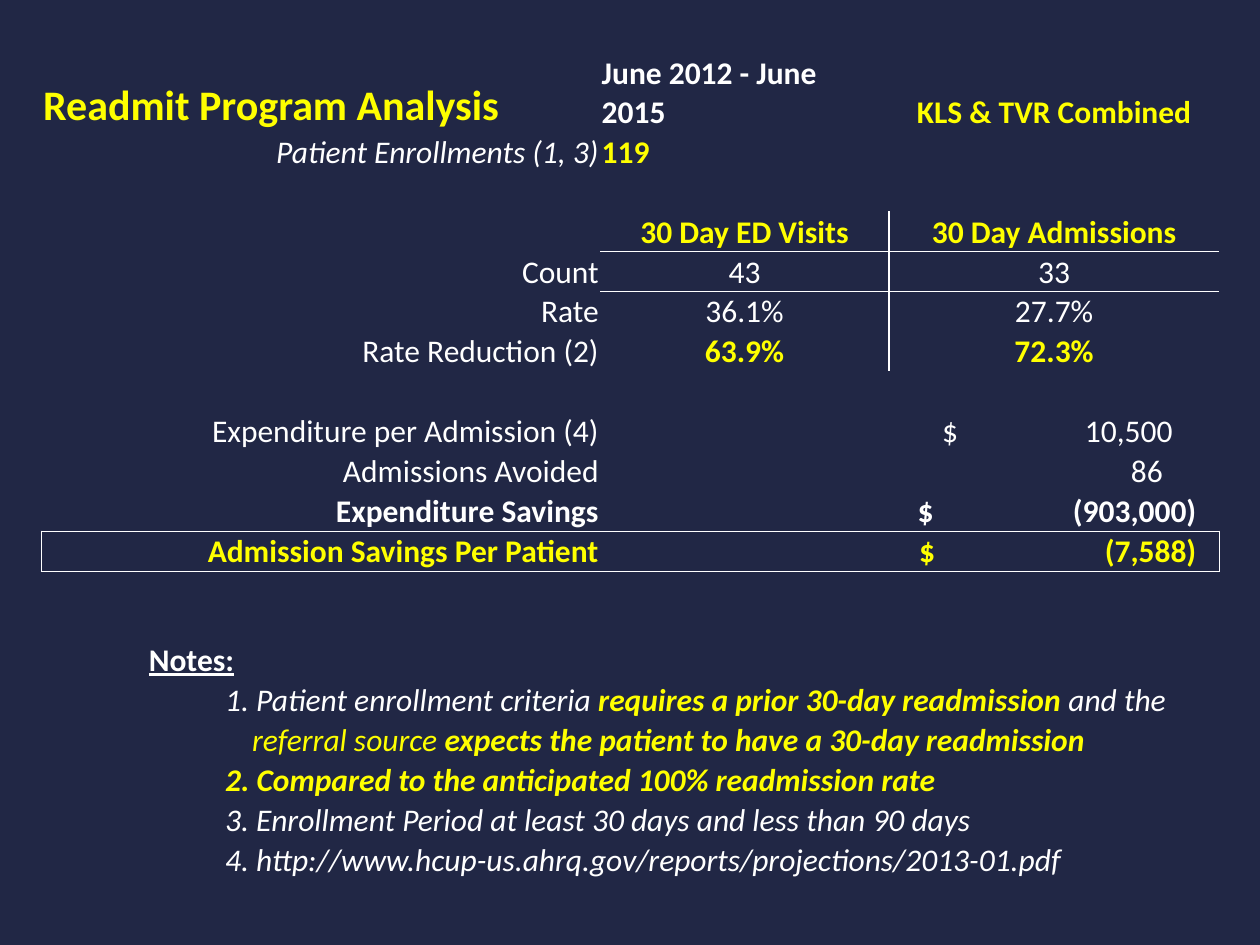
import pptx
import pptx.dml.color
import pptx.enum.text
import pptx.oxml
import pptx.oxml.ns
import pptx.util

Cm, Pt = pptx.util.Cm, pptx.util.Pt
ALIGN = pptx.enum.text.PP_ALIGN
COLORS = {"navy": "212745", "yellow": "FFFF00", "white": "FFFFFF"}
NO_STYLE = "{2D5ABB26-0587-4C30-8999-92F81FD0307C}"
ROW_H = 0.79
FIRST_ROW_H = 1.4
INSET = 0.03


def rgb(name):
    """Return the named colour."""
    return pptx.dml.color.RGBColor.from_string(COLORS[name])


def style_font(font, color="white", bold=False, italic=False, size=18, underline=False):
    """Format a paragraph or run font."""
    font.name, font.size = "Calibri", Pt(size)
    font.bold, font.italic, font.underline = bold, italic, underline
    font.color.rgb = rgb(color)


def put(cell, text, align=ALIGN.LEFT, left=INSET, right=INSET, tab=None, **font):
    """Write one formatted paragraph in a cell, with an optional right tab."""
    cell.margin_left, cell.margin_right = Cm(left), Cm(right)
    p = cell.text_frame.paragraphs[0]
    p.text = text
    p.alignment = align
    if tab:
        ns = pptx.oxml.ns.nsdecls("a")
        p._p.get_or_add_pPr().append(pptx.oxml.parse_xml(
            f'<a:tabLst {ns}><a:tab pos="{Cm(tab)}" algn="r"/></a:tabLst>'))
    style_font(p.font, **font)


def border(cell, sides):
    """Draw white 1 pt lines on the given sides of a cell."""
    ns = pptx.oxml.ns.nsdecls("a")
    ordered = [side for side in "LRTB" if side in sides]
    for i, side in enumerate(ordered):
        cell._tc.get_or_add_tcPr().insert(i, pptx.oxml.parse_xml(
            f'<a:ln{side} {ns} w="12700"><a:solidFill><a:srgbClr val="{COLORS["white"]}"/>'
            f'</a:solidFill></a:ln{side}>'))


def add_plain_table(slide, left, top, widths, heights):
    """Add a table without fills or lines and return it."""
    table = slide.shapes.add_table(len(heights), len(widths), Cm(left), Cm(top),
                                   Cm(sum(widths)), Cm(sum(heights))).table
    table.first_row = table.horz_banding = False
    table._tbl.tblPr.find(pptx.oxml.ns.qn("a:tableStyleId")).text = NO_STYLE
    for col, width in zip(table.columns, widths):
        col.width = Cm(width)
    for row, height in zip(table.rows, heights):
        row.height = Cm(height)
    for cell in table.iter_cells():
        cell.fill.background()
        cell.vertical_anchor = pptx.enum.text.MSO_ANCHOR.BOTTOM
        cell.margin_top, cell.margin_bottom = Cm(INSET), 0
        put(cell, "")
    return table


def add_analysis(slide, left, top, widths):
    """Build the readmission figures and the savings rows."""
    table = add_plain_table(slide, left, top, widths, [FIRST_ROW_H] + [ROW_H] * 11)
    cell = table.cell
    key = {"color": "yellow", "bold": True}
    put(cell(0, 0), "Readmit Program Analysis", size=24, **key)
    put(cell(0, 1), "June 2012 - June 2015", bold=True)
    put(cell(0, 2), "KLS & TVR Combined", ALIGN.CENTER, **key)
    put(cell(1, 0), "Patient Enrollments (1, 3)", ALIGN.RIGHT, italic=True)
    put(cell(1, 1), "119", **key)

    rates = [("", "30 Day ED Visits", "30 Day Admissions", key),
             ("Count", "43", "33", {}),
             ("Rate", "36.1%", "27.7%", {}),
             ("Rate Reduction (2)", "63.9%", "72.3%", key)]
    for row, (label, visits, admissions, font) in enumerate(rates, 3):
        put(cell(row, 0), label, ALIGN.RIGHT)
        put(cell(row, 1), visits, ALIGN.CENTER, **font)
        put(cell(row, 2), admissions, ALIGN.CENTER, **font)
        line = {3: "B", 4: "T"}.get(row, "")
        border(cell(row, 1), "R" + line)
        border(cell(row, 2), "L" + line)

    savings = [("Expenditure per Admission (4)", "10,500", 1.07, 5.72, {}),
               ("Admissions Avoided", "86", None, 5.52, {}),
               ("Expenditure Savings", "(903,000)", 0.58, 6.2, {"bold": True}),
               ("Admission Savings Per Patient", "(7,588)", 0.61, 6.2, key)]
    for row, (label, amount, start, end, font) in enumerate(savings, 8):
        put(cell(row, 0), label, ALIGN.RIGHT, **font)
        if start is None:
            put(cell(row, 2), amount, ALIGN.RIGHT, right=widths[2] - end, **font)
        else:
            put(cell(row, 2), f"$\t{amount}", left=start, tab=end - start, **font)
    for col, sides in enumerate(("LTB", "TB", "RTB")):
        border(cell(10, col), "B")
        border(cell(11, col), sides)


def add_notes(slide, left, top, widths):
    """Build the numbered notes with highlighted phrases."""
    plain, soft, strong = ("white", False), ("yellow", False), ("yellow", True)
    notes = [
        (1.57, [("1. Patient enrollment criteria ", plain),
                ("requires a prior 30-day readmission ", strong), ("and the", plain)]),
        (2.11, [("referral source ", soft),
                ("expects the patient to have a 30-day readmission", strong)]),
        (1.57, [("2. Compared to the anticipated 100% readmission rate", strong)]),
        (1.57, [("3. Enrollment Period at least 30 days and less than 90 days", plain)]),
        (1.57, [("4. http://www.hcup-us.ahrq.gov/reports/projections/2013-01.pdf", plain)]),
    ]
    table = add_plain_table(slide, left, top, widths, [ROW_H] * (len(notes) + 1))
    put(table.cell(0, 0), "Notes:", bold=True, underline=True)
    for row, (indent, runs) in enumerate(notes, 1):
        cell = table.cell(row, 0)
        cell.merge(table.cell(row, 3 if row == 1 else 2))
        if len(runs) == 1:
            text, (color, bold) = runs[0]
            put(cell, text, left=indent, color=color, bold=bold, italic=True)
            continue
        put(cell, "", left=indent, italic=True)
        for text, (color, bold) in runs:
            r = cell.text_frame.paragraphs[0].add_run()
            r.text = text
            style_font(r.font, color, bold, italic=True)


def main():
    """Build and save the slide."""
    prs = pptx.Presentation()
    prs.slide_width, prs.slide_height = Cm(25.4), Cm(19.05)
    slide = prs.slides.add_slide(prs.slide_layouts[6])
    slide.background.fill.solid()
    slide.background.fill.fore_color.rgb = rgb("navy")
    add_analysis(slide, 0.84, 1.07, [11.26, 5.82, 6.66])
    add_notes(slide, 2.97, 12.9, [9.17, 4.72, 5.41, 2.49])
    prs.save("out.pptx")


if __name__ == "__main__":
    main()
